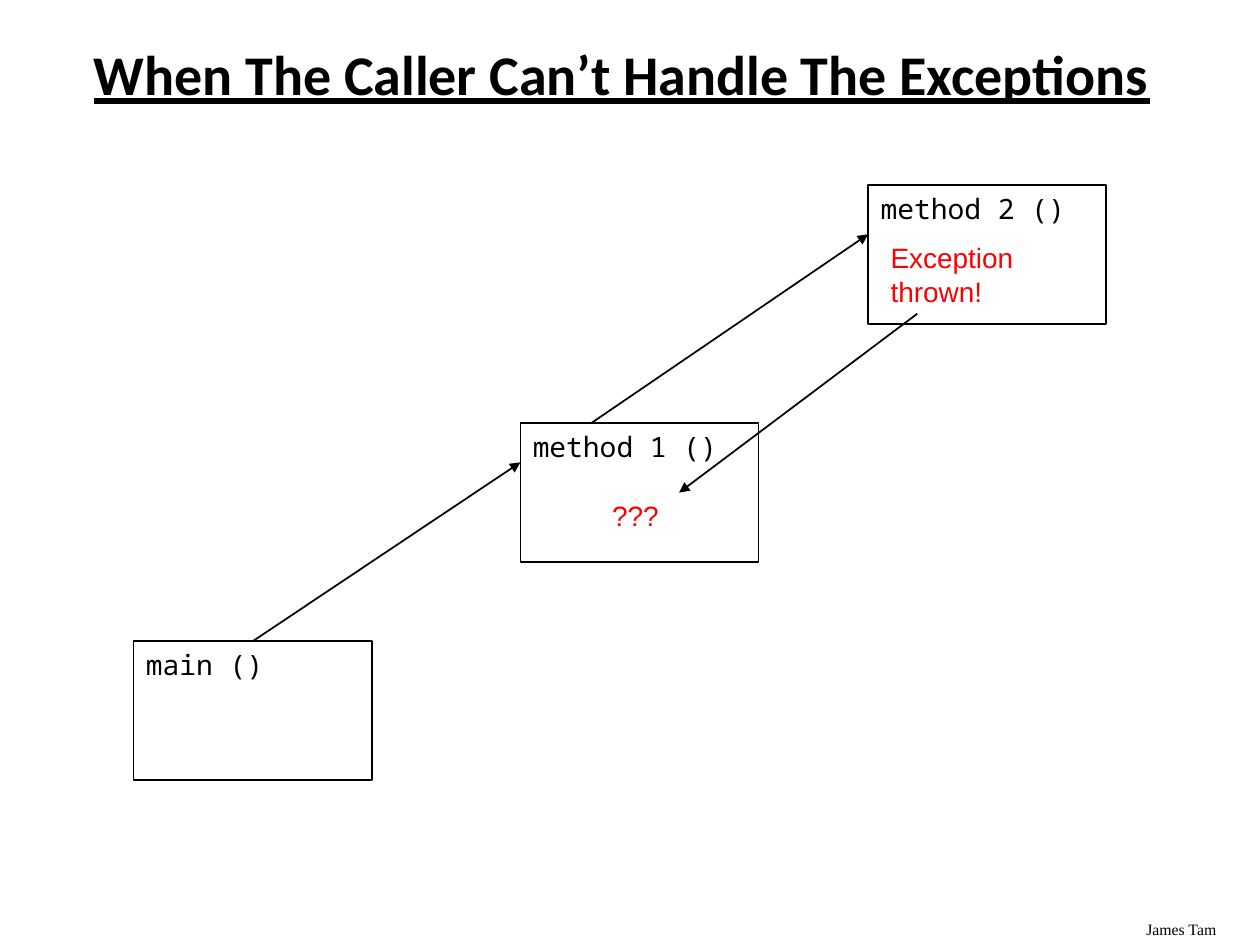
import dataclasses

import lxml.etree
import pptx
import pptx.dml.color
import pptx.enum.shapes
import pptx.enum.text
import pptx.oxml.ns
import pptx.util

Inches = pptx.util.Inches
Pt = pptx.util.Pt
RGBColor = pptx.dml.color.RGBColor
Align = pptx.enum.text.PP_ALIGN
Anchor = pptx.enum.text.MSO_ANCHOR


@dataclasses.dataclass(frozen=True)
class Theme:
    """Hold the colours, fonts and sizes of the slide."""
    ink: RGBColor = RGBColor(0, 0, 0)
    alert: RGBColor = RGBColor(255, 0, 0)
    title_font: str = "Calibri"
    code_font: str = "Noto Sans Mono"
    note_font: str = "Arial"
    footer_font: str = "Times New Roman"
    title_size: Pt = Pt(32)
    body_size: Pt = Pt(16)
    footer_size: Pt = Pt(9)
    line_width: Pt = Pt(1)


THEME = Theme()
BOX_WIDTH, BOX_HEIGHT = 1.89, 1.1
TITLE = {"name": THEME.title_font, "size": THEME.title_size, "bold": True, "underline": True}
CODE = {"name": THEME.code_font, "size": THEME.body_size}
NOTE = {"name": THEME.note_font, "size": THEME.body_size}
FOOTER = {"name": THEME.footer_font, "size": THEME.footer_size}


def apply(target, values):
    """Set each attribute in values on the target."""
    for name, value in values.items():
        setattr(target, name, value)


def write(shape, text, font, color=THEME.ink, frame=None, paragraph=None):
    """Write one formatted paragraph into a shape."""
    text_frame = shape.text_frame
    apply(text_frame, {"word_wrap": True, "vertical_anchor": Anchor.TOP, **(frame or {})})
    first = text_frame.paragraphs[0]
    apply(first, {"alignment": Align.LEFT, **(paragraph or {})})
    run = first.add_run()
    run.text = text
    apply(run.font, font)
    run.font.color.rgb = color


def add_text(slide, position, text, font, **formats):
    """Add a text box at left, top, width and height in inches."""
    shape = slide.shapes.add_textbox(*map(Inches, position))
    write(shape, text, font, **formats)


def add_method(slide, left, top, text):
    """Add an outlined box named after a method."""
    shape = slide.shapes.add_shape(
        pptx.enum.shapes.MSO_SHAPE.RECTANGLE,
        *map(Inches, (left, top, BOX_WIDTH, BOX_HEIGHT)))
    shape.shadow.inherit = False
    shape.fill.background()
    shape.line.color.rgb = THEME.ink
    shape.line.width = THEME.line_width
    write(shape, text, CODE)
    return shape


def add_arrow(slide, start, end):
    """Add a straight arrow between two points in inches."""
    arrow = slide.shapes.add_connector(
        pptx.enum.shapes.MSO_CONNECTOR.STRAIGHT, *map(Inches, start + end))
    arrow.line.color.rgb = THEME.ink
    arrow.line.width = THEME.line_width
    qn = pptx.oxml.ns.qn
    lxml.etree.SubElement(arrow.line._get_or_add_ln(), qn("a:tailEnd"), type="triangle")
    lxml.etree.SubElement(arrow._element.spPr, qn("a:effectLst"))
    return arrow


def main():
    """Build the call-chain slide and save it."""
    presentation = pptx.Presentation()
    apply(presentation, {"slide_width": Inches(10), "slide_height": Inches(7.5)})
    slide = presentation.slides.add_slide(presentation.slide_layouts[6])

    add_text(slide, (9, 7.25, 1, 0.25), "James Tam", FOOTER)
    add_text(slide, (0.47, 0.33, 8.93, 0.57), "When The Caller Can’t Handle The Exceptions",
             TITLE, frame={"vertical_anchor": Anchor.MIDDLE},
             paragraph={"alignment": Align.CENTER, "line_spacing": 0.9})

    main_box = add_method(slide, 1.06, 5.09, "main ()")
    add_method(slide, 4.13, 3.36, "method 1 ()")
    first_call = add_arrow(slide, (2.01, 5.09), (4.13, 3.67))
    first_call.begin_connect(main_box, 0)
    add_method(slide, 6.89, 1.47, "method 2 ()")
    add_arrow(slide, (4.69, 3.36), (6.89, 1.86))

    add_text(slide, (6.97, 1.86, 1.42, 0.64), "Exception thrown!", NOTE, color=THEME.alert)
    add_arrow(slide, (7.28, 2.49), (5.39, 3.91))
    add_text(slide, (4.76, 3.91, 0.71, 0.37), "???", NOTE, color=THEME.alert)

    presentation.save("out.pptx")


if __name__ == "__main__":
    main()
